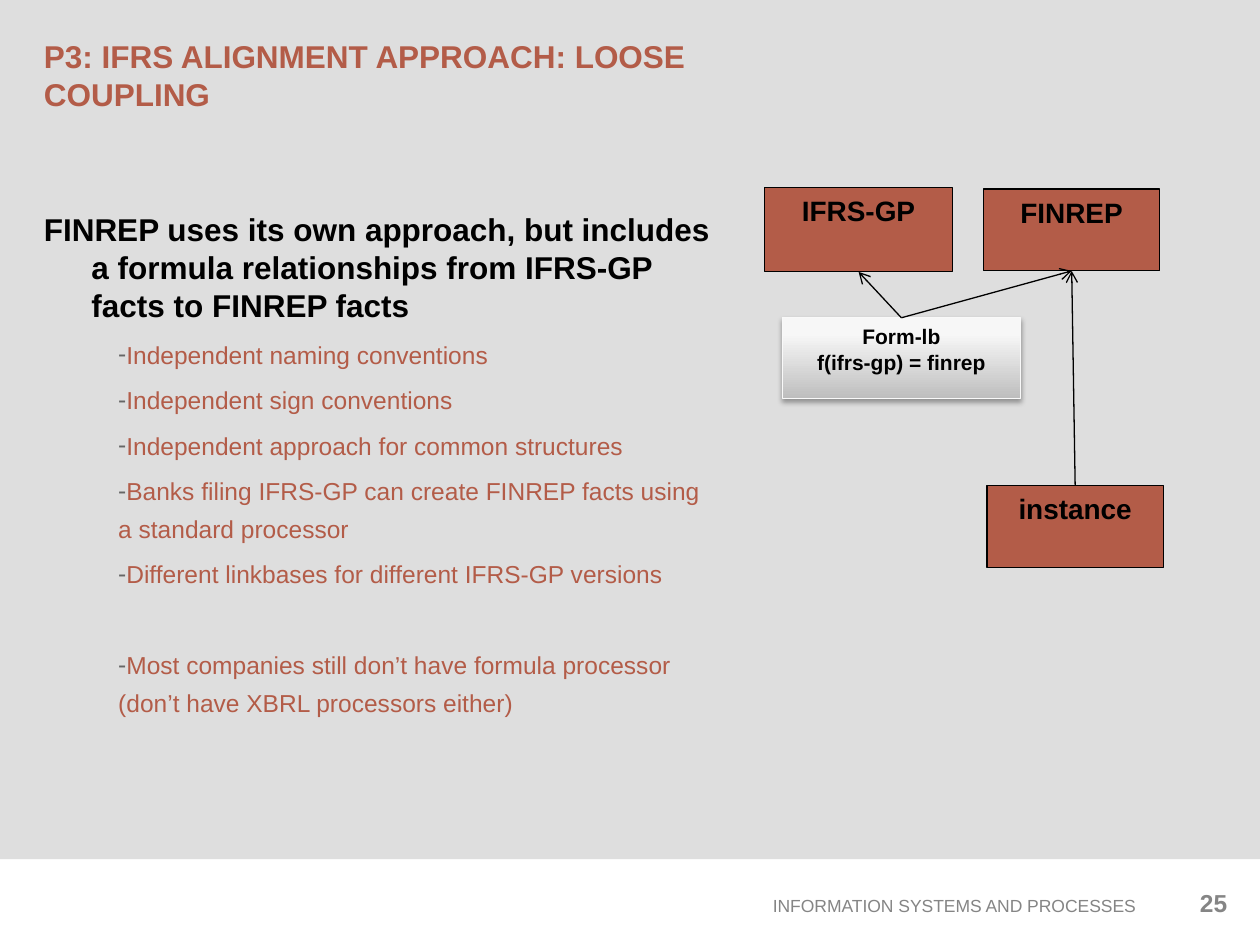
from dataclasses import dataclass

import pptx
import pptx.dml.color
import pptx.enum.shapes
import pptx.enum.text
import pptx.oxml
import pptx.oxml.ns
import pptx.util
from lxml import etree

Pt = pptx.util.Pt
ALIGN = pptx.enum.text.PP_ALIGN
ANCHOR = pptx.enum.text.MSO_ANCHOR
RECTANGLE = pptx.enum.shapes.MSO_SHAPE.RECTANGLE
STRAIGHT = pptx.enum.shapes.MSO_CONNECTOR.STRAIGHT
NS = 'xmlns:a="http://schemas.openxmlformats.org/drawingml/2006/main"'
RUST, BLACK, GREY = "B35C48", "000000", "858585"
TOP, BOTTOM = 0, 2  # connection sites of a rectangle
LINE_HEIGHT, PARAGRAPH_GAP = 21.6, 4.4

HEADLINE = ("FINREP uses its own approach, but includes a formula relationships "
            "from IFRS-GP facts to FINREP facts")
POINTS = [
    "Independent naming conventions",
    "Independent sign conventions",
    "Independent approach for common structures",
    "Banks filing IFRS-GP can create FINREP facts using a standard processor",
    "Different linkbases for different IFRS-GP versions",
    "Most companies still don’t have formula processor (don’t have XBRL processors either)",
]


@dataclass
class Area:
    left: float
    top: float
    width: float
    height: float

    def lengths(self) -> list:
        return [Pt(v) for v in (self.left, self.top, self.width, self.height)]


@dataclass
class Style:
    size: float
    color: str
    bold: bool = False
    align: ALIGN = ALIGN.LEFT


def rgb(value: str) -> pptx.dml.color.RGBColor:
    return pptx.dml.color.RGBColor.from_string(value)


def add_run(paragraph, text: str, style: Style) -> None:
    paragraph.alignment = style.align
    run = paragraph.add_run()
    run.text = text
    run.font.name = "Arial"
    run.font.size = Pt(style.size)
    run.font.bold = style.bold
    run.font.color.rgb = rgb(style.color)


def add_text(slide, area: Area, text: str, style: Style, anchor=ANCHOR.TOP):
    frame = slide.shapes.add_textbox(*area.lengths()).text_frame
    frame.word_wrap = True
    frame.vertical_anchor = anchor
    add_run(frame.paragraphs[0], text, style)
    return frame


def set_indent(paragraph, margin: float, indent: float) -> None:
    properties = paragraph._p.get_or_add_pPr()
    properties.set("marL", str(Pt(margin)))
    properties.set("indent", str(Pt(indent)))


def add_dash(paragraph) -> None:
    properties = paragraph._p.get_or_add_pPr()
    for xml in (f'<a:buClr {NS}><a:srgbClr val="666666"/></a:buClr>',
                f'<a:buFont {NS} typeface="Arial"/>',
                f'<a:buChar {NS} char="-"/>'):
        properties.append(pptx.oxml.parse_xml(xml))


def set_spacing(paragraph) -> None:
    paragraph.line_spacing = Pt(LINE_HEIGHT)
    paragraph.space_after = Pt(PARAGRAPH_GAP)


def add_body(slide) -> None:
    frame = add_text(slide, Area(18, 116.6, 400.3, 359.3), HEADLINE, Style(18, BLACK, True))
    set_indent(frame.paragraphs[0], 27.2, -27.2)
    set_spacing(frame.paragraphs[0])
    for point in POINTS:
        paragraph = frame.add_paragraph()
        set_indent(paragraph, 42.5, 0)
        add_dash(paragraph)
        set_spacing(paragraph)
        add_run(paragraph, point, Style(14, RUST))
    frame.paragraphs[-1].space_before = Pt(LINE_HEIGHT + PARAGRAPH_GAP)


def add_box(slide, area: Area, lines: list[str], size: float, fill: str = RUST,
            outline: str = BLACK):
    box = slide.shapes.add_shape(RECTANGLE, *area.lengths())
    box.shadow.inherit = False
    box.fill.solid()
    box.fill.fore_color.rgb = rgb(fill)
    box.line.color.rgb = rgb(outline)
    box.line.width = Pt(0.75)
    frame = box.text_frame
    frame.vertical_anchor = ANCHOR.TOP
    for index, line in enumerate(lines):
        paragraph = frame.add_paragraph() if index else frame.paragraphs[0]
        add_run(paragraph, line, Style(size, BLACK, True, ALIGN.CENTER))
    return box


def add_sheen(box) -> None:
    """Give the box a vertical grey gradient and a soft shadow below."""
    properties = box._element.spPr
    stops = "".join(f'<a:gs pos="{position * 1000}"><a:srgbClr val="{color}"/></a:gs>'
                    for position, color in ((0, "BEBEBE"), (80, "F7F7F7"), (100, "F8F8F8")))
    gradient = pptx.oxml.parse_xml(
        f'<a:gradFill {NS} rotWithShape="1"><a:gsLst>{stops}</a:gsLst>'
        f'<a:lin ang="{270 * 60000}" scaled="0"/></a:gradFill>')
    properties.replace(properties.find(pptx.oxml.ns.qn("a:solidFill")), gradient)
    effects = properties.find(pptx.oxml.ns.qn("a:effectLst"))
    effects.append(pptx.oxml.parse_xml(
        f'<a:outerShdw {NS} blurRad="{Pt(3.1)}" dist="{Pt(1.8)}" dir="{90 * 60000}" '
        'rotWithShape="0"><a:srgbClr val="000000"><a:alpha val="35000"/></a:srgbClr>'
        '</a:outerShdw>'))


def add_arrow(slide, source, target) -> None:
    """Draw an arrow from the top of one box to the bottom of another."""
    arrow = slide.shapes.add_connector(STRAIGHT, 0, 0, 0, 0)
    arrow.begin_connect(source, TOP)
    arrow.end_connect(target, BOTTOM)
    arrow.line.color.rgb = rgb(BLACK)
    arrow.line.width = Pt(0.75)
    line = arrow.line._get_or_add_ln()
    etree.SubElement(line, pptx.oxml.ns.qn("a:tailEnd"), type="arrow")
    etree.SubElement(arrow._element.spPr, pptx.oxml.ns.qn("a:effectLst"))


def main() -> None:
    deck = pptx.Presentation()
    deck.slide_width, deck.slide_height = Pt(720), Pt(540)
    slide = deck.slides.add_slide(deck.slide_layouts[6])

    panel = slide.shapes.add_shape(RECTANGLE, *Area(0, 0, 720, 491).lengths())
    panel.shadow.inherit = False
    panel.fill.solid()
    panel.fill.fore_color.rgb = rgb("DEDEDE")
    panel.line.fill.background()

    add_text(slide, Area(221.8, 507.6, 434.2, 19.4), "INFORMATION SYSTEMS AND PROCESSES",
             Style(10, GREY, align=ALIGN.RIGHT), ANCHOR.MIDDLE)
    add_text(slide, Area(18, 8.6, 466.6, 68.4), "P3: IFRS ALIGNMENT APPROACH: LOOSE COUPLING",
             Style(18, RUST, True), ANCHOR.MIDDLE)
    add_body(slide)
    add_text(slide, Area(667.4, 504, 41, 25.2), "25", Style(14, GREY, True, ALIGN.RIGHT))

    ifrs = add_box(slide, Area(437, 107.2, 107.3, 48.2), ["IFRS-GP"], 16)
    finrep = add_box(slide, Area(562, 108, 100.8, 46.8), ["FINREP"], 16)
    instance = add_box(slide, Area(564, 277.4, 100.8, 46.8), ["instance"], 16)
    formula = add_box(slide, Area(447, 181.6, 136.2, 46), ["Form-lb", "f(ifrs-gp) = finrep"], 12,
                      outline="F9F9F9")
    add_sheen(formula)
    for source, target in ((instance, finrep), (formula, ifrs), (formula, finrep)):
        add_arrow(slide, source, target)

    deck.save("out.pptx")


if __name__ == "__main__":
    main()
